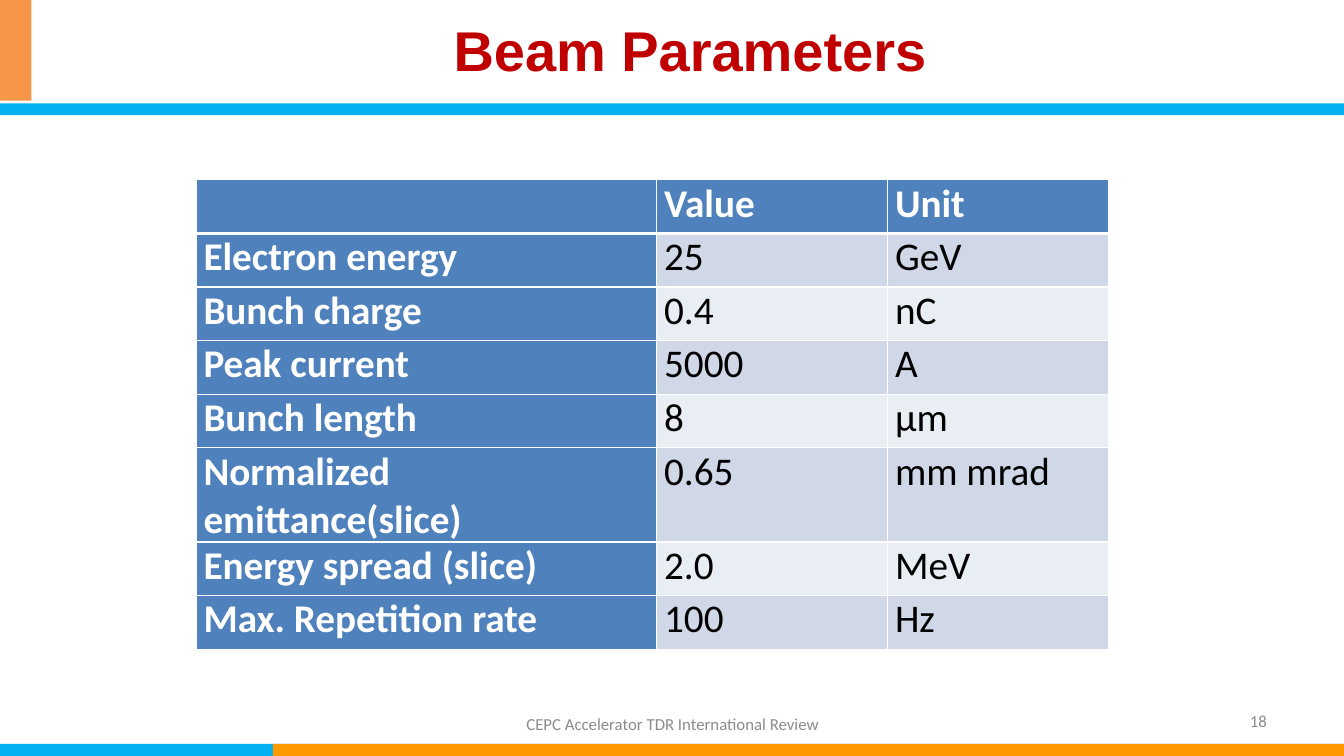
from lxml import etree
from pptx import Presentation
from pptx import oxml
from pptx import util as u
from pptx.dml import color
from pptx.enum import shapes, text
from pptx.oxml import ns

Pt = u.Pt
COLORS = {
    "white": "FFFFFF", "black": "000000", "red": "C00000", "grey": "8C8C8C",
    "cyan": "00B0F0", "orange": "FF9900", "peach": "F79646",
    "header": "4F81BD", "band_dark": "D0D8E8", "band_light": "E9EDF4",
}
BARS = [
    (0, 531.36, 960, 8.64, "cyan"),
    (195, 531.36, 765, 8.64, "orange"),
    (0, 73.8, 960, 8.4, "cyan"),
    (0, 0, 22.4, 72, "peach"),
]
ROWS = [
    ("", "Value", "Unit"),
    ("Electron energy", "25", "GeV"),
    ("Bunch charge", "0.4", "nC"),
    ("Peak current", "5000", "A"),
    ("Bunch length", "8", "µm"),
    ("Normalized emittance(slice)", "0.65", "mm mrad"),
    ("Energy spread (slice)", "2.0", "MeV"),
    ("Max. Repetition rate", "100", "Hz"),
]
COL_WIDTHS = (329, 165, 158)
ROW_HEIGHT = 38.3


def rgb(name):
    return color.RGBColor.from_string(COLORS[name])


def set_fill(fill, name):
    fill.solid()
    fill.fore_color.rgb = rgb(name)


def format_text(tf, size, name, align, font="Calibri", bold=False):
    for p in tf.paragraphs:
        p.alignment = align
        for r in p.runs:
            r.font.size = Pt(size)
            r.font.name = font
            r.font.bold = bold
            r.font.color.rgb = rgb(name)


def add_bar(s, x, y, w, h, name):
    sp = s.shapes.add_shape(shapes.MSO_SHAPE.RECTANGLE, Pt(x), Pt(y), Pt(w), Pt(h))
    sp.shadow.inherit = False
    set_fill(sp.fill, name)
    sp.line.fill.background()


def add_title(s, title):
    sp = s.shapes.title
    sp.left, sp.top, sp.width, sp.height = Pt(26.6), Pt(9.4), Pt(932.4), Pt(57.6)
    set_fill(sp.fill, "white")
    tf = sp.text_frame
    tf.text = title
    tf.vertical_anchor = text.MSO_ANCHOR.MIDDLE
    tf.paragraphs[0].line_spacing = 0.9
    format_text(tf, 40, "red", text.PP_ALIGN.CENTER, "Arial", True)


def add_label(s, x, y, w, h, words, align):
    sp = s.shapes.add_textbox(Pt(x), Pt(y), Pt(w), Pt(h))
    tf = sp.text_frame
    tf.word_wrap = True
    tf.vertical_anchor = text.MSO_ANCHOR.MIDDLE
    tf.text = words
    format_text(tf, 12, "grey", align)


def add_border(cell, side, width):
    pr = cell._tc.get_or_add_tcPr()
    ln = etree.SubElement(pr, ns.qn(f"a:{side}"), w=str(Pt(width)))
    fill = etree.SubElement(ln, ns.qn("a:solidFill"))
    etree.SubElement(fill, ns.qn("a:srgbClr"), val=COLORS["white"])


def format_cell(cell, row, col, words):
    heading = row == 0 or col == 0
    band = "band_dark" if row % 2 else "band_light"
    cell.margin_left = cell.margin_right = Pt(5.4)
    cell.margin_top = cell.margin_bottom = 0
    cell.text = words
    format_text(cell.text_frame, 28, "white" if heading else "black",
                text.PP_ALIGN.JUSTIFY, bold=heading)
    widths = {"lnL": 1, "lnR": 1, "lnT": 3 if row == 1 else 1, "lnB": 3 if row == 0 else 1}
    for side, width in widths.items():
        add_border(cell, side, width)
    set_fill(cell.fill, "header" if heading else band)


def add_parameter_table(s, x, y):
    frame = s.shapes.add_table(len(ROWS), len(COL_WIDTHS), Pt(x), Pt(y),
                               Pt(sum(COL_WIDTHS)), Pt(ROW_HEIGHT * len(ROWS)))
    table = frame.table
    for column, width in zip(table.columns, COL_WIDTHS):
        column.width = Pt(width)
    for i, values in enumerate(ROWS):
        table.rows[i].height = Pt(ROW_HEIGHT)
        for j, words in enumerate(values):
            format_cell(table.cell(i, j), i, j, words)


def main():
    prs = Presentation()
    prs.slide_width, prs.slide_height = Pt(960), Pt(540)
    s = prs.slides.add_slide(prs.slide_layouts[5])
    add_title(s, "Beam Parameters")
    for bar in BARS:
        add_bar(s, *bar)
    add_label(s, 282.2, 502.9, 396.7, 28.1,
              "CEPC Accelerator TDR International Review", text.PP_ALIGN.CENTER)
    add_label(s, 688, 500.8, 224, 28.8, "18", text.PP_ALIGN.RIGHT)
    add_parameter_table(s, 140, 128.4)
    prs.save("out.pptx")


if __name__ == "__main__":
    main()
